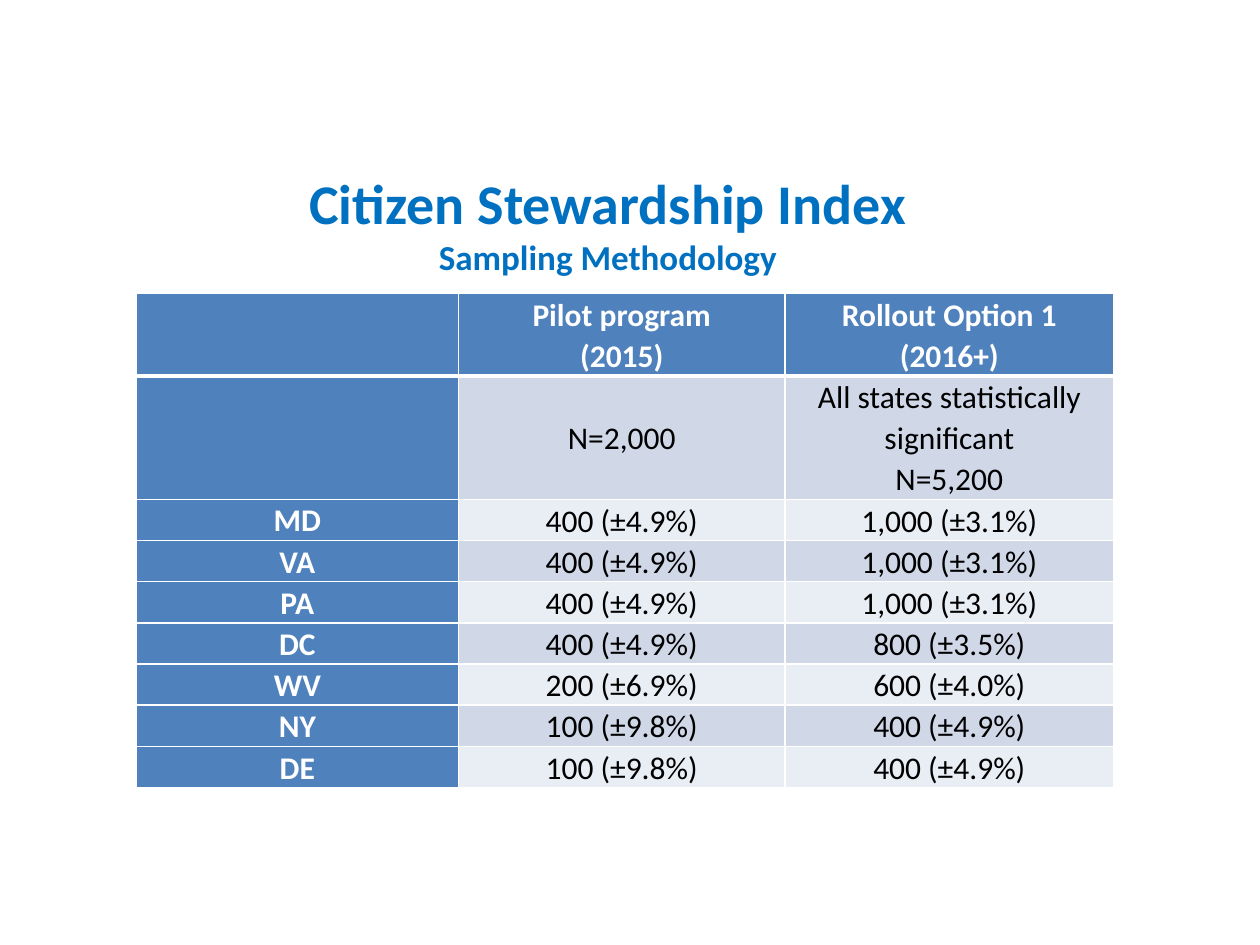
from lxml import etree
from pptx import Presentation
from pptx.dml.color import RGBColor
from pptx.enum.text import MSO_ANCHOR, PP_ALIGN
from pptx.oxml.ns import qn
from pptx.util import Inches, Pt

CENTER = PP_ALIGN.CENTER
TOP, MIDDLE = MSO_ANCHOR.TOP, MSO_ANCHOR.MIDDLE

COLORS = {
    "title": "0070C0",
    "header": "4F81BD",
    "band_dark": "D0D8E8",
    "band_light": "E9EDF4",
    "white": "FFFFFF",
    "black": "000000",
}
FONT = "Calibri"

TITLE = [("Citizen Stewardship Index", 32), ("Sampling Methodology", 20)]
ROWS = [
    ("", "Pilot program\n(2015)", "Rollout Option 1 (2016+)"),
    ("", "N=2,000", "All states statistically significant\nN=5,200"),
    ("MD", "400 (±4.9%)", "1,000 (±3.1%)"),
    ("VA", "400 (±4.9%)", "1,000 (±3.1%)"),
    ("PA", "400 (±4.9%)", "1,000 (±3.1%)"),
    ("DC", "400 (±4.9%)", "800 (±3.5%)"),
    ("WV", "200 (±6.9%)", "600 (±4.0%)"),
    ("NY", "100 (±9.8%)", "400 (±4.9%)"),
    ("DE", "100 (±9.8%)", "400 (±4.9%)"),
]
COL_WIDTHS = [2.56, 2.59, 2.61]
ROW_HEIGHTS = [0.64, 0.96] + [0.32] * (len(ROWS) - 2)


def write(p, text, size=18, color="black", bold=False, spacing=None):
    p.alignment = CENTER
    p.line_spacing = spacing
    p.font.size = Pt(size)
    if text:
        r = p.add_run()
        r.text = text
        r.font.name = FONT
        r.font.size = Pt(size)
        r.font.bold = bold
        r.font.color.rgb = RGBColor.from_string(COLORS[color])


def add_borders(cell, bottom):
    tc_pr = cell._tc.get_or_add_tcPr()
    for side, width in (("L", 1), ("R", 1), ("T", 1), ("B", bottom)):
        ln = etree.SubElement(tc_pr, qn(f"a:ln{side}"), w=str(Pt(width)))
        fill = etree.SubElement(ln, qn("a:solidFill"))
        etree.SubElement(fill, qn("a:srgbClr"), val=COLORS["white"])


def fill_cell(cell, text, row, col):
    heading = row == 0 or col == 0
    band = "band_dark" if row % 2 else "band_light"
    add_borders(cell, bottom=3 if row == 0 else 1)
    cell.fill.solid()
    cell.fill.fore_color.rgb = RGBColor.from_string(COLORS["header" if heading else band])
    cell.margin_left = cell.margin_right = Inches(0.07)
    cell.margin_top = cell.margin_bottom = 0
    cell.vertical_anchor = TOP if col == 0 else MIDDLE
    tf = cell.text_frame
    for i, line in enumerate(text.split("\n")):
        p = tf.add_paragraph() if i else tf.paragraphs[0]
        write(p, line, color="white" if heading else "black", bold=heading, spacing=1.07)


def add_sample_table(s):
    table = s.shapes.add_table(
        len(ROWS), len(COL_WIDTHS), Inches(1.08), Inches(2.33),
        Inches(sum(COL_WIDTHS)), Inches(sum(ROW_HEIGHTS))).table
    table.first_row = table.horz_banding = False
    for column, width in zip(table.columns, COL_WIDTHS):
        column.width = Inches(width)
    for i, (row, height) in enumerate(zip(table.rows, ROW_HEIGHTS)):
        row.height = Inches(height)
        for j, cell in enumerate(row.cells):
            fill_cell(cell, ROWS[i][j], i, j)


def add_title(s):
    sp = s.shapes.add_textbox(Inches(2.24), Inches(1.29), Inches(5.17), Inches(0.98))
    tf = sp.text_frame
    tf.word_wrap = True
    for i, (line, size) in enumerate(TITLE):
        p = tf.add_paragraph() if i else tf.paragraphs[0]
        write(p, line, size=size, color="title", bold=True)


def main():
    prs = Presentation()
    prs.slide_width, prs.slide_height = Inches(10), Inches(7.5)
    s = prs.slides.add_slide(prs.slide_layouts[6])
    add_sample_table(s)
    add_title(s)
    prs.save("out.pptx")


if __name__ == "__main__":
    main()
